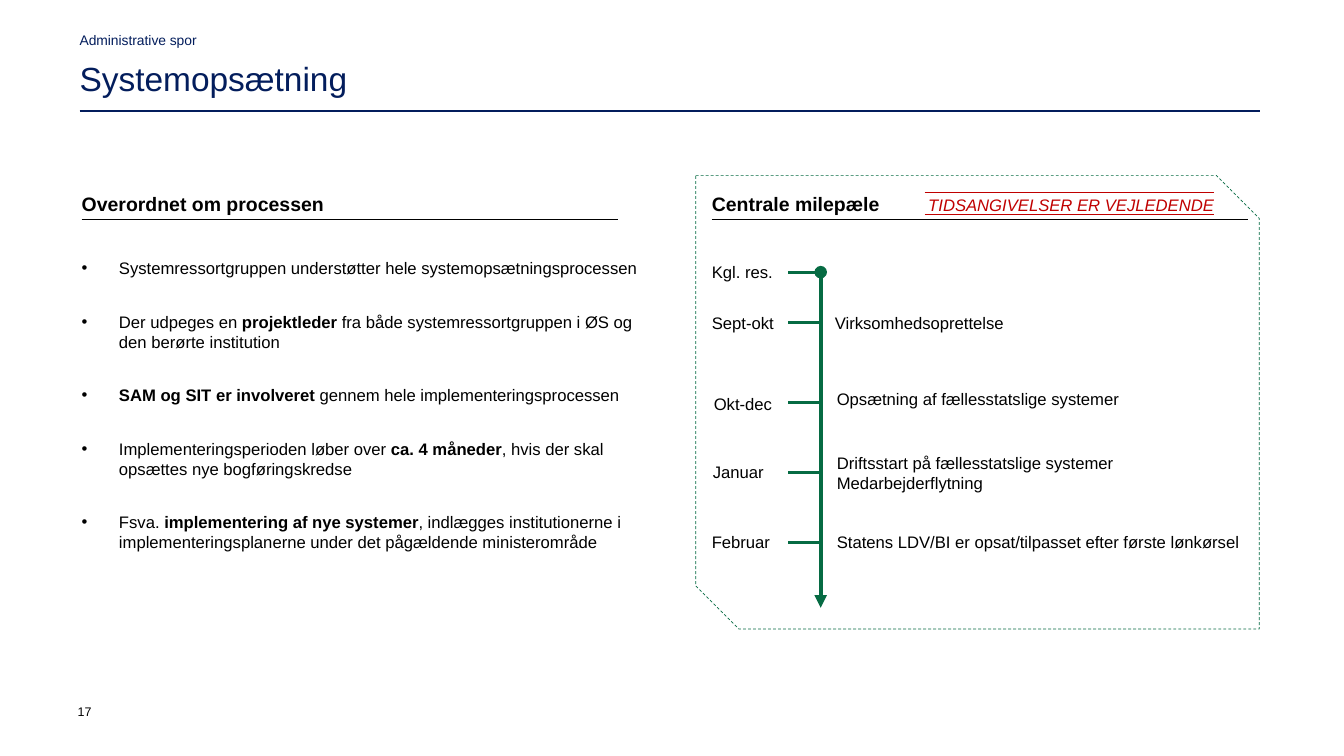
from pptx import Presentation
from pptx.dml.color import RGBColor
from pptx.enum.dml import MSO_LINE
from pptx.enum.shapes import MSO_CONNECTOR, MSO_SHAPE
from pptx.enum.text import MSO_ANCHOR, MSO_AUTO_SIZE, PP_ALIGN
from pptx.oxml.ns import qn
from pptx.util import Inches, Pt
from lxml.etree import SubElement

NAVY = RGBColor(0x03, 0x1D, 0x5C)
GREEN = RGBColor(0x06, 0x6B, 0x43)
RED = RGBColor(0xC0, 0x00, 0x00)
BLACK = RGBColor(0x00, 0x00, 0x00)
WHITE = RGBColor(0xFF, 0xFF, 0xFF)

FONT = "Arial"
TEXT_SIZE = 11.9
TIMELINE_X = 8.14
TICK_LENGTH = 0.32
LINE_HEIGHT = 0.2

# Each bullet is a list of (text, bold) runs
BULLETS = [
    [("Systemressortgruppen understøtter hele systemopsætningsprocessen", False)],
    [("Der udpeges en ", False), ("projektleder ", True),
     ("fra både systemressortgruppen i ØS og den berørte institution", False)],
    [("SAM og SIT er involveret ", True),
     ("gennem hele implementeringsprocessen", False)],
    [("Implementeringsperioden løber over ", False), ("ca. 4 måneder", True),
     (", hvis der skal opsættes nye bogføringskredse", False)],
    [("Fsva. ", False), ("implementering af nye systemer", True),
     (", indlægges institutionerne i implementeringsplanerne under det "
      "pågældende ministerområde", False)],
]

# Tick y, date, date left and top, description lines, description left and top
MILESTONES = [
    (2.7, "Kgl. res.", 7.06, 2.6, [], 0, 0),
    (3.2, "Sept-okt", 7.06, 3.1, ["Virksomhedsoprettelse"], 8.28, 3.1),
    (3.99, "Okt-dec", 7.08, 3.91,
     ["Opsætning af fællesstatslige systemer"], 8.3, 3.86),
    (4.69, "Januar", 7.07, 4.58,
     ["Driftsstart på fællesstatslige systemer", "Medarbejderflytning"], 8.3, 4.49),
    (5.38, "Februar", 7.06, 5.28,
     ["Statens LDV/BI er opsat/tilpasset efter første lønkørsel"], 8.3, 5.28),
]


def add_run(paragraph, text, size=TEXT_SIZE, color=BLACK, bold=False, italic=False):
    run = paragraph.add_run()
    run.text = text
    run.font.name = FONT
    run.font.size = Pt(size)
    run.font.color.rgb = color
    run.font.bold = bold
    run.font.italic = italic


def prepare_frame(shape, anchor=MSO_ANCHOR.TOP, wrap=True):
    frame = shape.text_frame
    frame.margin_left = frame.margin_right = 0
    frame.margin_top = frame.margin_bottom = 0
    frame.vertical_anchor = anchor
    frame.word_wrap = wrap
    frame.auto_size = MSO_AUTO_SIZE.NONE
    return frame


def place(shape, left, top, width, height):
    shape.left, shape.top = Inches(left), Inches(top)
    shape.width, shape.height = Inches(width), Inches(height)


def add_text(slide, lines, left, top, width, height, anchor=MSO_ANCHOR.TOP,
             wrap=True, align=PP_ALIGN.LEFT, line_spacing=1.0, **style):
    box = slide.shapes.add_textbox(
        Inches(left), Inches(top), Inches(width), Inches(height))
    frame = prepare_frame(box, anchor, wrap)
    for index, line in enumerate(lines):
        paragraph = frame.add_paragraph() if index else frame.paragraphs[0]
        paragraph.alignment = align
        paragraph.line_spacing = line_spacing
        add_run(paragraph, line, **style)


def add_line(slide, x1, y1, x2, y2, color, width):
    line = slide.shapes.add_connector(
        MSO_CONNECTOR.STRAIGHT, Inches(x1), Inches(y1), Inches(x2), Inches(y2))
    line.line.color.rgb = color
    line.line.width = Pt(width)
    SubElement(line._element.spPr, qn("a:effectLst"))
    return line


def add_title(slide):
    title = slide.shapes.title
    place(title, 0.79, 0.62, 11.71, 0.39)
    paragraph = prepare_frame(title).paragraphs[0]
    paragraph.alignment = PP_ALIGN.LEFT
    paragraph.line_spacing = 0.9
    add_run(paragraph, "Systemopsætning", 23.9, NAVY)


def add_bullets(slide):
    body = slide.placeholders[1]
    place(body, 0.81, 2.56, 5.54, 3.15)
    frame = prepare_frame(body)
    for index, runs in enumerate(BULLETS):
        paragraph = frame.add_paragraph() if index else frame.paragraphs[0]
        paragraph.alignment = PP_ALIGN.LEFT
        paragraph.line_spacing = 1.0
        paragraph.space_before = Pt(23.9 if index else 0)
        properties = paragraph._p.get_or_add_pPr()
        properties.set("marL", str(Inches(0.37)))
        properties.set("indent", str(-Inches(0.37)))
        SubElement(properties, qn("a:buFont"), typeface=FONT)
        SubElement(properties, qn("a:buChar"), char="•")
        for text, bold in runs:
            add_run(paragraph, text, bold=bold)


def add_heading(slide, text, left):
    add_text(slide, [text], left, 1.91, 5.32, 0.23, size=13.9, bold=True)
    add_line(slide, left, 2.18, left + 5.32, 2.18, BLACK, 0.5)


def add_panel(slide):
    panel = slide.shapes.add_shape(
        MSO_SHAPE.SNIP_2_DIAG_RECTANGLE,
        Inches(6.9), Inches(1.74), Inches(5.59), Inches(4.5))
    panel.adjustments[0], panel.adjustments[1] = 0, 0.095
    panel.shadow.inherit = False
    panel.fill.solid()
    panel.fill.fore_color.rgb = WHITE
    panel.line.color.rgb = GREEN
    panel.line.width = Pt(0.5)
    panel.line.dash_style = MSO_LINE.DASH


def add_timeline(slide):
    axis = add_line(slide, TIMELINE_X, 2.7, TIMELINE_X, 6.03, GREEN, 3)
    outline = axis.line._get_or_add_ln()
    SubElement(outline, qn("a:headEnd"), type="oval")
    SubElement(outline, qn("a:tailEnd"), type="triangle")
    for tick_y, date, date_left, date_top, lines, left, top in MILESTONES:
        add_line(slide, TIMELINE_X, tick_y, TIMELINE_X - TICK_LENGTH, tick_y,
                 GREEN, 2.25)
        add_text(slide, [date], date_left, date_top, 0.73, LINE_HEIGHT,
                 MSO_ANCHOR.MIDDLE)
        if lines:
            add_text(slide, lines, left, top, 4.07, LINE_HEIGHT * len(lines),
                     MSO_ANCHOR.MIDDLE)


def add_notice(slide):
    add_text(slide, ["TIDSANGIVELSER ER VEJLEDENDE"], 9.17, 1.92, 2.87, 0.22,
             MSO_ANCHOR.MIDDLE, wrap=False, align=PP_ALIGN.RIGHT,
             color=RED, italic=True)
    for y in (1.91, 2.13):
        add_line(slide, 9.17, y, 12.04, y, RED, 0.75)


def main():
    presentation = Presentation()
    presentation.slide_width = Inches(13.33)
    presentation.slide_height = Inches(7.5)
    slide = presentation.slides.add_slide(presentation.slide_layouts[1])

    # Header and page number
    add_text(slide, ["Administrative spor"], 0.79, 0.33, 10.58, 0.21,
             line_spacing=0.9, size=9.9, color=NAVY)
    add_title(slide)
    add_line(slide, 0.79, 1.1, 12.5, 1.1, NAVY, 1.5)
    add_text(slide, ["17"], 0.77, 6.98, 0.31, 0.39, size=8.9)

    # Process column
    add_heading(slide, "Overordnet om processen", 0.81)
    add_bullets(slide)

    # Milestone column
    add_panel(slide)
    add_heading(slide, "Centrale milepæle", 7.06)
    add_notice(slide)
    add_timeline(slide)

    presentation.save("out.pptx")


if __name__ == "__main__":
    main()
